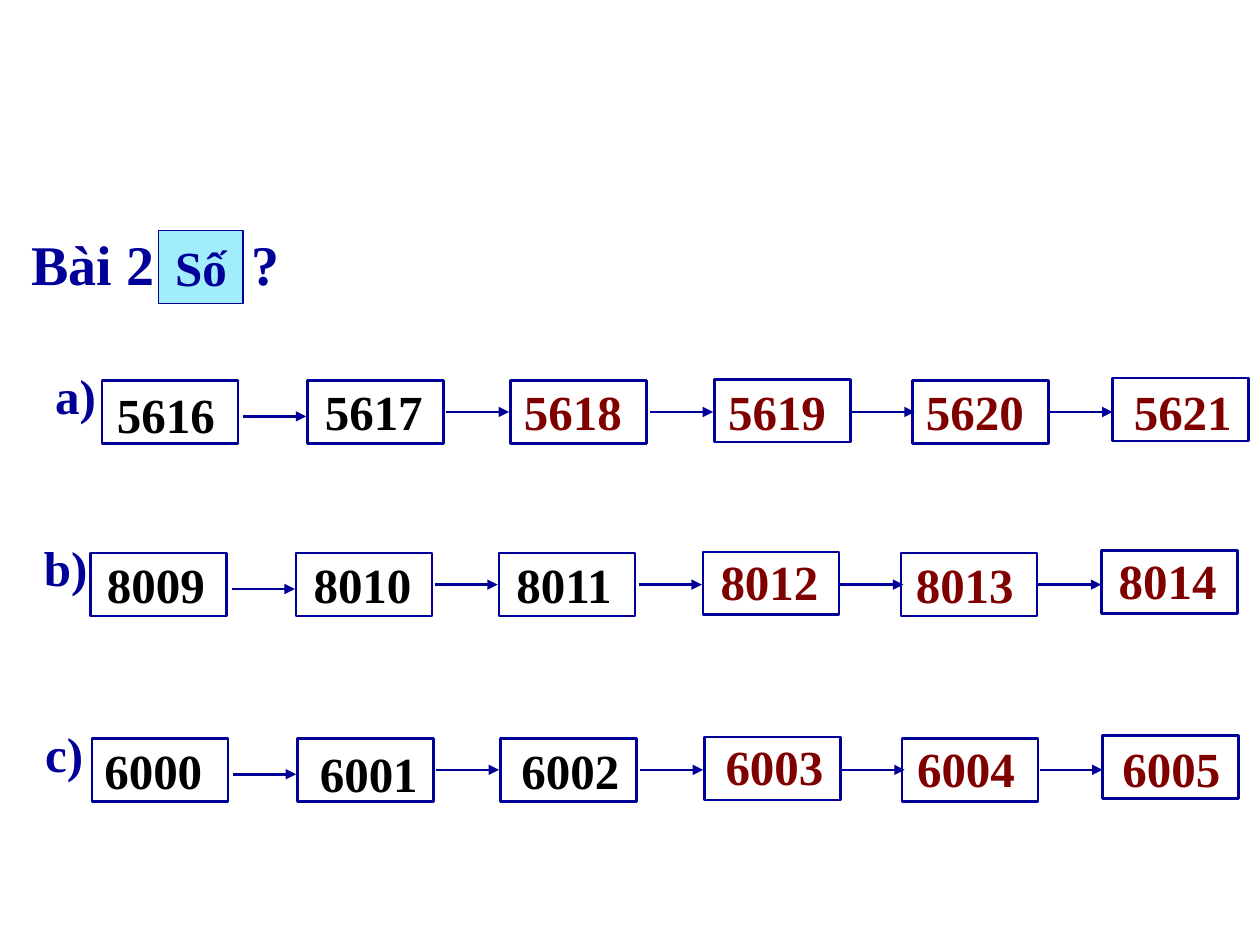
from lxml.etree import SubElement
from pptx import Presentation
from pptx.dml.color import RGBColor
from pptx.enum.shapes import MSO_CONNECTOR, MSO_SHAPE
from pptx.enum.text import MSO_ANCHOR, PP_ALIGN
from pptx.oxml.ns import qn
from pptx.util import Inches, Pt

COLORS = {"navy": "000099", "sky": "A2EDFC", "white": "FFFFFF",
          "given": "000000", "answer": "800000"}
CELL = 0.1
STOPS = [(0, 0), (16.3, 0), (32.4, 0), (48.6, -0.1), (64.3, 0), (80.2, -0.2)]
ARROWS = [(11.2, 2.85), (27.3, 2.5), (43.5, 2.5), (59.5, 2.5), (75.2, 2.5)]
ROWS = [
    ("a)", 5616, 2, (8.1, 30.2),
     [(.2, -.2), (.4, -.4), (.1, -.4), (.1, -.3), (.1, -.4), (.7, -.2)]),
    ("b)", 8009, 3, (7.2, 43.9),
     [(.3, -.4), (.4, -.4), (.4, -.4), (.4, -.5), (.2, -.4), (.4, -.5)]),
    ("c)", 6000, 3, (7.3, 58.6),
     [(0, -.3), (.8, -.1), (.7, -.3), (.7, -.5), (.2, -.5), (.6, -.3)]),
]


def grid(*cells):
    """Turn counts of grid cells into lengths."""
    return [Inches(n * CELL) for n in cells]


def tint(name):
    """Look up a colour by name."""
    return RGBColor.from_string(COLORS[name])


def style(para, text, size, color):
    """Write bold text into a paragraph."""
    para.text = text
    font = para.font
    font.name, font.size, font.bold = "Times New Roman", Pt(size), True
    font.color.rgb = tint(color)


def label(slide, box, text, color="navy", size=28):
    """Place a line of text in a box of grid cells."""
    frame = slide.shapes.add_textbox(*grid(*box)).text_frame
    frame.word_wrap = True
    style(frame.paragraphs[0], text, size, color)


def frame(slide, box, fill="white", width=1.5):
    """Draw an outlined rectangle."""
    shape = slide.shapes.add_shape(MSO_SHAPE.RECTANGLE, *grid(*box))
    shape.shadow.inherit = False
    shape.fill.solid()
    shape.fill.fore_color.rgb = tint(fill)
    shape.line.color.rgb = tint("navy")
    shape.line.width = Pt(width)
    return shape


def arrow(slide, left, top, length=5):
    """Draw an arrow pointing right."""
    line = slide.shapes.add_connector(
        MSO_CONNECTOR.STRAIGHT, *grid(left, top, left + length, top))
    line.line.color.rgb = tint("navy")
    line.line.width = Pt(1.5)
    SubElement(line.line._get_or_add_ln(), qn("a:tailEnd"), type="triangle")
    SubElement(line._element.spPr, qn("a:effectLst"))


def title(slide, left, top):
    """Place the exercise heading with its boxed word."""
    label(slide, (left, top, 12, 6.4), "Bài 2", size=32)
    label(slide, (left + 17.5, top, 5, 6.4), "?", size=32)
    shape = frame(slide, (left + 11.1, top + .6, 6.7, 5.8), "sky", 0.75)
    text = shape.text_frame
    text.word_wrap = False
    text.vertical_anchor = MSO_ANCHOR.MIDDLE
    para = text.paragraphs[0]
    para.alignment = PP_ALIGN.CENTER
    style(para, "Số", 28, "navy")


def chain(slide, name, start, given, corner, shifts):
    """Place a row of consecutive numbers joined by arrows."""
    left, top = corner
    for x, y in STOPS:
        frame(slide, (left + x, top + y, 10.8, 5))
    label(slide, (left - 4.7, top - 1.7, 6.7, 5.7), name)
    for x, y in ARROWS:
        arrow(slide, left + x, top + y)
    for i, ((x, y), (dx, dy)) in enumerate(zip(STOPS, shifts)):
        box = left + x + dx, top + y + dy, 10.5, 5.7
        label(slide, box, str(start + i), "given" if i < given else "answer")


def main():
    """Build and save the slide."""
    deck = Presentation()
    deck.slide_width, deck.slide_height = grid(100, 75)
    slide = deck.slides.add_slide(deck.slide_layouts[6])
    title(slide, 1.5, 17.7)
    for row in ROWS:
        chain(slide, *row)
    deck.save("out.pptx")


if __name__ == "__main__":
    main()
